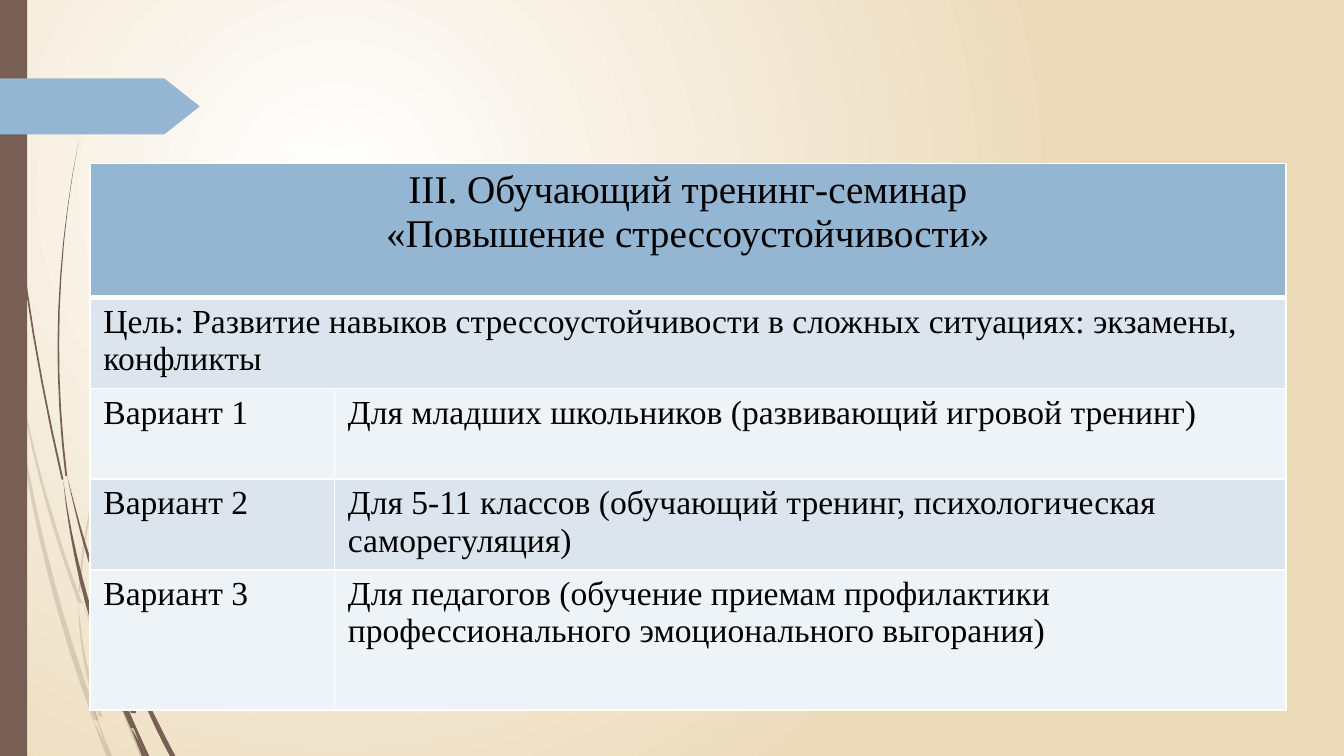
from lxml.etree import SubElement
from pptx import Presentation
from pptx.dml.color import RGBColor as Rgb
from pptx.enum.shapes import MSO_SHAPE as Preset
from pptx.enum.text import PP_ALIGN as Align
from pptx.oxml.ns import qn
from pptx.util import Pt

COLORS = {
    "white": "FFFFFF", "sand": "EBD9B7", "brown": "775F55", "blue": "94B6D2",
    "band": "DCE5EE", "light": "EEF3F7", "text": "000000",
}
FONT = "Times New Roman"
STEPS = 10
FINENESS = 10

PALE_STEMS = [
    ((6, 189), (3, 169), (0, 152), 2),
    ((7, 186), (17, 256), (42, 323), 2),
    ((44, 322), (58, 364), (75, 405), 3),
    ((6, 189), (14, 289), (50, 386), 3),
    ((42, 323), (42, 354), (53, 384), 2),
    ((156, 83), (48, 199), (42, 317), 1),
    ((50, 386), (53, 395), (57, 405), 2),
    ((47, 369), (52, 389), (59, 405), 1),
]
DARK_STEMS = [
    ((2, 0), (3, 128), (33, 257), 1),
    ((36, 255), (45, 300), (63, 346), 2),
    ((66, 346), (76, 377), (91, 405), 3),
    ((34, 258), (40, 324), (70, 390), 3),
    ((42, 76), (24, 166), (35, 255), 1),
    ((156, 186), (71, 263), (63, 341), 2),
    ((70, 390), (73, 397), (76, 405), 2),
    ((63, 348), (65, 366), (70, 382), 3),
    ((66, 374), (71, 390), (78, 405), 2),
]
ARROW = [(0, 42), (88, 42), (107, 57), (88, 72), (0, 72)]

COLUMN_WIDTHS = [131, 509.8]
ROW_HEIGHTS = [72, 48.6, 48.6, 48.6, 75]
TABLE_ROWS = [
    ["III. Обучающий тренинг-семинар\n«Повышение стрессоустойчивости»"],
    ["Цель: Развитие навыков стрессоустойчивости в сложных ситуациях: экзамены, конфликты"],
    ["Вариант 1", "Для младших школьников (развивающий игровой тренинг)"],
    ["Вариант 2", "Для 5-11 классов (обучающий тренинг, психологическая саморегуляция)"],
    ["Вариант 3", "Для педагогов (обучение приемам профилактики "
                  "профессионального эмоционального выгорания)"],
]


def color(name):
    return Rgb.from_string(COLORS[name])


def paint_background(page):
    fill = page.background.fill
    fill.gradient()
    for stop, name in zip(fill.gradient_stops, ("white", "sand")):
        stop.color.rgb = color(name)
    linear = page.element.find(".//" + qn("a:lin"))
    gradient = linear.getparent()
    gradient.remove(linear)
    circle = SubElement(gradient, qn("a:path"), path="circle")
    SubElement(circle, qn("a:fillToRect"), l="50000", t="50000", r="100000", b="100000")


def paint_shape(shape, name, opacity=100):
    shape.shadow.inherit = False
    shape.line.fill.background()
    shape.fill.solid()
    shape.fill.fore_color.rgb = color(name)
    if opacity < 100:
        tint = shape.element.spPr.find(".//" + qn("a:srgbClr"))
        SubElement(tint, qn("a:alpha"), val=str(opacity * 1000))


def add_outline(shapes, points, name, opacity=100):
    fine = [(x * FINENESS, y * FINENESS) for x, y in points]
    builder = shapes.build_freeform(*fine[0], scale=Pt(1 / FINENESS))
    builder.add_line_segments(fine[1:], close=True)
    paint_shape(builder.convert_to_shape(), name, opacity)


def curve(start, bend, end):
    shares = [step / STEPS for step in range(STEPS + 1)]
    return [
        tuple((1 - t) ** 2 * a + 2 * t * (1 - t) * b + t ** 2 * c
              for a, b, c in zip(start, bend, end))
        for t in shares
    ]


def stem_outline(tip, bend, foot, width):
    left = curve(tip, bend, foot)
    right = curve(tip, (bend[0] + width, bend[1]), (foot[0] + width, foot[1]))
    return left + right[:0:-1]


def add_stems(page, stems, opacity=100):
    group = page.shapes.add_group_shape()
    for stem in stems:
        add_outline(group.shapes, stem_outline(*stem), "brown", opacity)


def add_bar(page, height):
    bar = page.shapes.add_shape(Preset.RECTANGLE, 0, 0, Pt(14.6), height)
    paint_shape(bar, "brown")


def set_borders(cell, bottom, top):
    properties = cell._tc.get_or_add_tcPr()
    for side, width in (("L", 1), ("R", 1), ("T", top), ("B", bottom)):
        line = SubElement(properties, qn("a:ln" + side), w=str(int(Pt(width))))
        fill = SubElement(line, qn("a:solidFill"))
        SubElement(fill, qn("a:srgbClr"), val=COLORS["white"])


def format_cell(cell, name, row):
    set_borders(cell, 3 if row == 0 else 1, 3 if row == 1 else 1)
    cell.fill.solid()
    cell.fill.fore_color.rgb = color(name)
    cell.margin_left = cell.margin_right = Pt(7.2)
    cell.margin_top = cell.margin_bottom = Pt(3)


def write_cell(cell, text, heading):
    cell.text_frame.text = text
    for para in cell.text_frame.paragraphs:
        para.alignment = Align.CENTER if heading else Align.LEFT
        for span in para.runs:
            span.font.name = FONT
            span.font.size = Pt(21 if heading else 18)
            span.font.bold = False
            span.font.color.rgb = color("text")


def add_plan_table(page):
    frame = page.shapes.add_table(
        len(ROW_HEIGHTS), len(COLUMN_WIDTHS), Pt(48.2), Pt(87.6),
        Pt(sum(COLUMN_WIDTHS)), Pt(sum(ROW_HEIGHTS)))
    table = frame.table
    table.horz_banding = False
    for column, width in zip(table.columns, COLUMN_WIDTHS):
        column.width = Pt(width)
    for index, (texts, height) in enumerate(zip(TABLE_ROWS, ROW_HEIGHTS)):
        table.rows[index].height = Pt(height)
        cells = [table.cell(index, place) for place in range(len(COLUMN_WIDTHS))]
        name = "blue" if index == 0 else ("light", "band")[index % 2]
        for cell in cells:
            format_cell(cell, name, index)
        if len(texts) == 1:
            cells[0].merge(cells[-1])
        for cell, text in zip(cells, texts):
            write_cell(cell, text, index == 0)


def main():
    deck = Presentation()
    deck.slide_width, deck.slide_height = Pt(720), Pt(405)
    page = deck.slides.add_slide(deck.slide_layouts[6])
    paint_background(page)
    add_stems(page, PALE_STEMS, opacity=20)
    add_stems(page, DARK_STEMS)
    add_bar(page, deck.slide_height)
    add_outline(page.shapes, ARROW, "blue")
    add_plan_table(page)
    deck.save("out.pptx")


if __name__ == "__main__":
    main()
